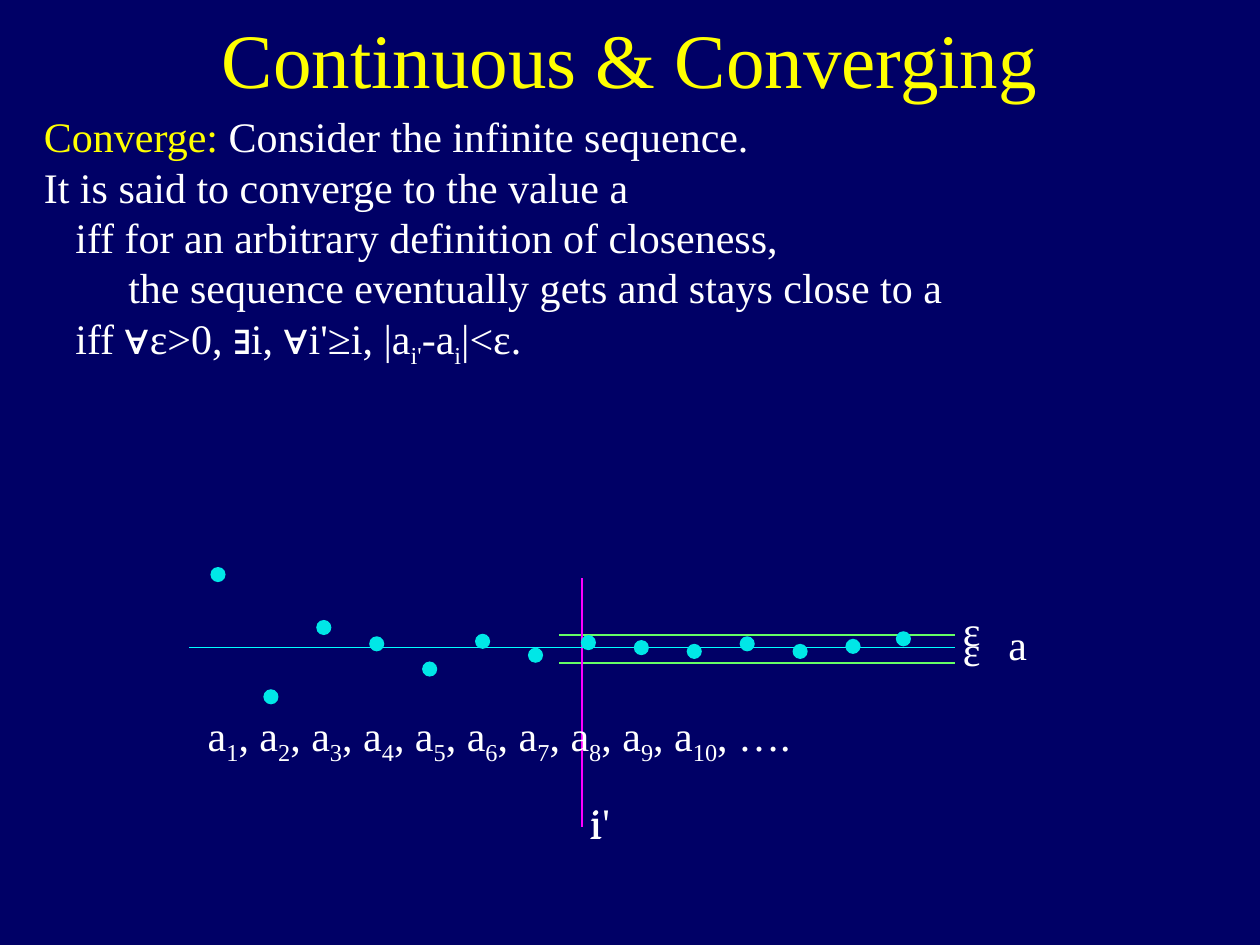
import pptx
import pptx.util
import pptx.dml.color
import pptx.enum.shapes
import pptx.enum.text
import pptx.oxml.ns
import lxml.etree

Inches = pptx.util.Inches
ALIGN = pptx.enum.text.PP_ALIGN

THEME = {
    "back": "000066", "text": "FFFFFF", "key": "FFFF00", "band": "66FF66",
    "mark": "FF00FF", "axis": "00FFFF", "dot": "00E7E7",
    "font": "Times New Roman", "sign": "Arial",
    "head": 44, "body": 24, "line": 1,
}

TITLE = [(0, [("Continuous & Converging", "key")])]
BODY = [
    (0, [("Converge: ", "key"), ("Consider the infinite sequence.", "")]),
    (0, [("It is said to converge to the value a", "")]),
    (0.25, [("iff for an arbitrary definition of closeness,", "")]),
    (0.67, [("the sequence eventually gets and stays close to a", "")]),
    (0.25, [("iff ", ""), ("∀", "sign"), ("ε>0, ", ""), ("∃", "sign"),
            ("i, ", ""), ("∀", "sign"), ("i'≥i, |a", ""), ("i'", "sub"),
            ("-a", ""), ("i", "sub"), ("|<ε.", "")]),
]
TERMS = 10
LINES = [
    ((4.44, 5.04), (7.58, 5.04), "band"),
    ((4.44, 5.26), (7.58, 5.26), "band"),
    ((4.62, 4.59), (4.62, 6.56), "mark"),
    ((1.5, 5.14), (7.58, 5.14), "axis"),
]
LABELS = [
    ("ε", 7.53, 4.75, 0.35), ("ε", 7.53, 4.91, 0.35), ("i", 4.58, 6.28, 0.29),
    ("i'", 4.58, 6.27, 0.36), ("a", 7.9, 4.86, 0.35),
]
TOPS = [4.5, 5.47, 4.92, 5.05, 5.25, 5.03, 5.14, 5.04, 5.08, 5.11, 5.05, 5.11, 5.07]
FIRST, STEP, SIZE = 1.67, 0.42, 0.12
LAST = (7.11, 5.01)


def color(name):
    return pptx.dml.color.RGBColor.from_string(THEME[name])


def write(slide, box, paras, size="body", align=ALIGN.LEFT, wrap=True):
    frame = slide.shapes.add_textbox(*map(Inches, box)).text_frame
    frame.word_wrap = wrap
    if size == "head":
        frame.vertical_anchor = pptx.enum.text.MSO_ANCHOR.MIDDLE
    for n, (indent, parts) in enumerate(paras):
        para = frame.add_paragraph() if n else frame.paragraphs[0]
        para.alignment = align
        if indent:
            para._p.get_or_add_pPr().set("marL", str(Inches(indent)))
        for text, style in parts:
            run = para.add_run()
            run.text = text
            run.font.size = pptx.util.Pt(THEME[size])
            run.font.name = THEME["sign" if style == "sign" else "font"]
            run.font.color.rgb = color("key" if style == "key" else "text")
            if style == "sub":
                run._r.get_or_add_rPr().set("baseline", "-25000")


def rule(slide, start, end, name):
    kind = pptx.enum.shapes.MSO_CONNECTOR.STRAIGHT
    line = slide.shapes.add_connector(kind, *map(Inches, start + end))
    line.line.color.rgb = color(name)
    line.line.width = pptx.util.Pt(THEME["line"])
    lxml.etree.SubElement(line._element.spPr, pptx.oxml.ns.qn("a:effectLst"))


def dot(group, left, top):
    kind = pptx.enum.shapes.MSO_SHAPE.OVAL
    shape = group.shapes.add_shape(kind, *map(Inches, (left, top, SIZE, SIZE)))
    shape.shadow.inherit = False
    shape.fill.solid()
    shape.fill.fore_color.rgb = color("dot")
    shape.line.fill.background()


def main():
    """Build the slide on a converging sequence."""
    deck = pptx.Presentation()
    deck.slide_width, deck.slide_height = Inches(10), Inches(7.5)
    slide = deck.slides.add_slide(deck.slide_layouts[6])
    slide.background.fill.solid()
    slide.background.fill.fore_color.rgb = color("back")

    write(slide, (0.75, -0.17, 8.5, 1.25), TITLE, "head", ALIGN.CENTER)
    write(slide, (0.25, 0.83, 9.92, 2.12), BODY)
    for start, end, name in LINES:
        rule(slide, start, end, name)
    for text, left, top, width in LABELS:
        write(slide, (left, top, width, 0.5), [(0, [(text, "")])],
              align=ALIGN.RIGHT, wrap=False)

    terms = []
    for n in range(1, TERMS + 1):
        terms += [("a" if n == 1 else ", a", ""), (str(n), "sub")]
    terms.append((", ….", ""))
    write(slide, (1.47, 5.58, 7.53, 0.5), [(0.08, terms)])

    group = slide.shapes.add_group_shape()
    for n, top in enumerate(TOPS):
        dot(group, FIRST + n * STEP, top)
    dot(slide, *LAST)
    deck.save("out.pptx")


if __name__ == "__main__":
    main()
